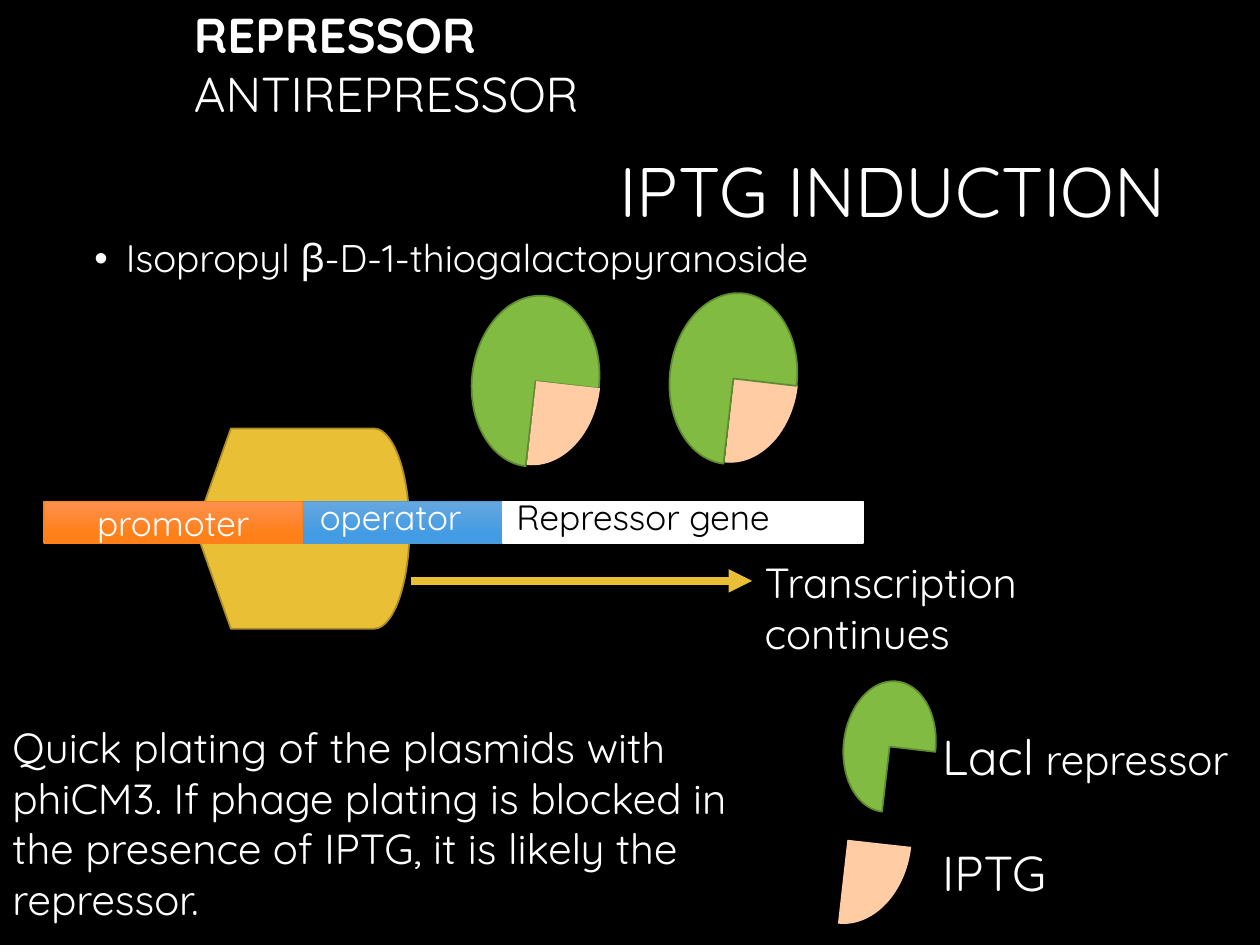
from lxml import etree
from pptx import Presentation
from pptx.dml.color import RGBColor
from pptx.enum import shapes, text
from pptx.oxml.ns import qn
from pptx.util import Inches, Pt

BLACK = RGBColor(0x00, 0x00, 0x00)
WHITE = RGBColor(0xFF, 0xFF, 0xFF)
GOLD = RGBColor(0xE9, 0xBF, 0x35)
GOLD_EDGE = RGBColor(0xAC, 0x8D, 0x27)
GREEN = RGBColor(0x81, 0xBB, 0x42)
GREEN_EDGE = RGBColor(0x5F, 0x8A, 0x31)
PEACH = RGBColor(0xFF, 0xCC, 0xA3)
BLUE_TOP = RGBColor(0x66, 0xA7, 0xE0)
BLUE = RGBColor(0x43, 0x9C, 0xE3)
BLUE_EDGE = RGBColor(0x4A, 0x9B, 0xDC)
ORANGE_TOP = RGBColor(0xFE, 0x90, 0x4F)
ORANGE = RGBColor(0xFF, 0x80, 0x19)
ORANGE_EDGE = RGBColor(0xFE, 0x80, 0x1A)

SHAPE = shapes.MSO_SHAPE


class SlideBuilder:
    font = "Quicksand"

    def __init__(self, slide, background):
        self.s = slide
        fill = slide.background.fill
        fill.solid()
        fill.fore_color.rgb = background

    def style(self, r, size, color=WHITE, bold=False):
        r.font.name = self.font
        r.font.size = Pt(size)
        r.font.bold = bold
        r.font.color.rgb = color

    def title(self, box, words, size):
        sp = self.s.shapes.title
        sp.left, sp.top, sp.width, sp.height = map(Inches, box)
        tf = sp.text_frame
        tf.text = words
        tf.vertical_anchor = text.MSO_ANCHOR.MIDDLE
        p = tf.paragraphs[0]
        p.alignment = text.PP_ALIGN.RIGHT
        p.line_spacing = 0.9
        self.style(p.runs[0], size)

    def text(self, box, *lines, color=WHITE):
        """Each line is a list of (words, size) or (words, size, bold) runs."""
        sp = self.s.shapes.add_textbox(*map(Inches, box))
        tf = sp.text_frame
        tf.word_wrap = True
        for i, line in enumerate(lines):
            p = tf.add_paragraph() if i else tf.paragraphs[0]
            for words, size, *bold in line:
                r = p.add_run()
                r.text = words
                self.style(r, size, color, bool(bold and bold[0]))
        return sp

    def bullet(self, box, words, size):
        p = self.text(box, [(words, size)]).text_frame.paragraphs[0]
        pPr = p._p.get_or_add_pPr()
        pPr.set("marL", str(Inches(0.25)))
        pPr.set("indent", str(-Inches(0.25)))
        etree.SubElement(pPr, qn("a:buFont")).set("typeface", "Arial")
        etree.SubElement(pPr, qn("a:buChar")).set("char", "•")
        p.line_spacing = 0.9

    def shape(self, kind, box, fill, edge, weight=1, rotation=0):
        """Draw a preset shape; a pair of fills makes a top-to-bottom gradient."""
        sp = self.s.shapes.add_shape(kind, *map(Inches, box))
        sp.shadow.inherit = False
        sp.rotation = rotation
        if isinstance(fill, list):
            sp.fill.gradient()
            sp.fill.gradient_angle = 270
            for stop, color, position in zip(sp.fill.gradient_stops, fill, (0, 0.78)):
                stop.color.rgb = color
                stop.position = position
        else:
            sp.fill.solid()
            sp.fill.fore_color.rgb = fill
        sp.line.color.rgb = edge
        sp.line.width = Pt(weight)
        return sp

    def label(self, sp, words, size):
        tf = sp.text_frame
        tf.text = words
        tf.vertical_anchor = text.MSO_ANCHOR.MIDDLE
        p = tf.paragraphs[0]
        p.alignment = text.PP_ALIGN.CENTER
        self.style(p.runs[0], size)

    def repressor(self, left, top, width=1.36, height=1.01):
        self.shape(SHAPE.PIE, (left, top, width, height), GREEN, GREEN_EDGE, rotation=96.6)

    def inducer(self, left, top):
        self.shape(SHAPE.ARC, (left, top, 1.33, 1.01), PEACH, PEACH, 0.75, 96.4)

    def arrow(self, x1, y1, x2, y2, color, weight):
        c = self.s.shapes.add_connector(
            shapes.MSO_CONNECTOR.STRAIGHT, *map(Inches, (x1, y1, x2, y2)))
        c.line.color.rgb = color
        c.line.width = Pt(weight)
        etree.SubElement(c.line._get_or_add_ln(), qn("a:tailEnd")).set("type", "triangle")
        etree.SubElement(c._element.spPr, qn("a:effectLst"))


def main():
    prs = Presentation()
    prs.slide_width, prs.slide_height = Inches(10), Inches(7.5)
    b = SlideBuilder(prs.slides.add_slide(prs.slide_layouts[5]), BLACK)

    b.title((2.38, 0.84, 6.97, 1.41), "IPTG INDUCTION", 40)
    b.text((1.44, -0.01, 7.18, 1.03),
           [("REPRESSOR", 28, True)], [("ANTIREPRESSOR", 28)])
    b.bullet((0.65, 1.85, 8.7, 4.45), "Isopropyl β-D-1-thiogalactopyranoside", 22)

    # Polymerase on the gene
    b.inducer(5.16, 2.5)
    b.shape(SHAPE.FLOWCHART_DISPLAY, (1.55, 3.4, 1.7, 1.59), GOLD, GOLD_EDGE)
    gene_top, gene_height = 3.98, 0.33
    b.shape(SHAPE.RECTANGLE, (2.39, gene_top, 1.61, gene_height),
            [BLUE_TOP, BLUE], BLUE_EDGE, 0.75)
    b.shape(SHAPE.RECTANGLE, (3.99, gene_top, 2.86, gene_height), WHITE, WHITE)
    b.text((4, 3.88, 2.85, 0.44), [("Repressor gene", 20)], color=BLACK)
    promoter = b.shape(SHAPE.RECTANGLE, (0.35, gene_top, 2.05, gene_height),
                       [ORANGE_TOP, ORANGE], ORANGE_EDGE, 0.75)
    b.label(promoter, "promoter", 20)
    b.text((2.44, 3.88, 1.53, 0.54), [("operator", 20)])

    # Repressors bound by IPTG
    b.repressor(3.57, 2.52)
    b.repressor(5.14, 2.5)
    b.inducer(3.59, 2.52)

    # Legend
    b.inducer(6.06, 6.16)
    b.repressor(6.54, 5.56, 1.04, 0.73)
    b.text((7.38, 5.72, 2.53, 0.57), [("Lacl", 28), (" repressor", 24)])
    b.text((7.38, 6.64, 1.03, 0.57), [("IPTG", 28)])

    # Outcome
    b.text((5.97, 4.37, 4.03, 0.91), [("Transcription", 24)], [("continues", 24)])
    b.arrow(3.26, 4.61, 5.97, 4.61, GOLD, 4.5)
    b.text((0, 5.68, 6.38, 1.72),
           [("Quick plating of the plasmids with", 24)],
           [("phiCM3. If phage plating is blocked in", 24)],
           [("the presence of IPTG, it is likely the", 24)],
           [("repressor.", 24)])

    prs.save("out.pptx")


if __name__ == "__main__":
    main()
